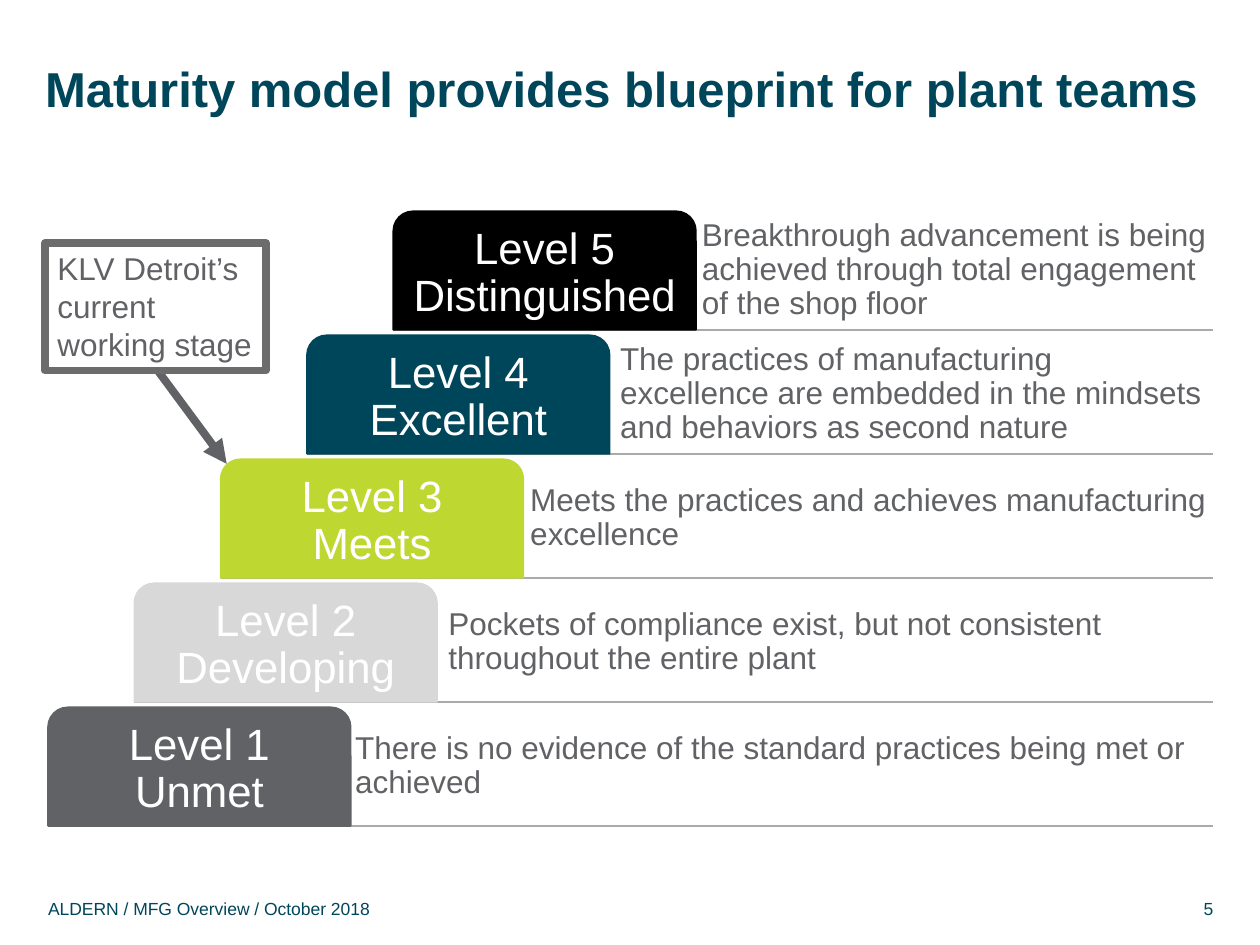
"""Build the maturity model slide: a staircase of five levels."""
from lxml import etree
from pptx import Presentation
from pptx.dml.color import RGBColor
from pptx.enum.shapes import MSO_CONNECTOR, MSO_SHAPE
from pptx.enum.text import MSO_ANCHOR, PP_ALIGN
from pptx.oxml.ns import qn
from pptx.util import Cm, Pt

STRAIGHT = MSO_CONNECTOR.STRAIGHT
TAB = MSO_SHAPE.ROUND_2_SAME_RECTANGLE
RECTANGLE = MSO_SHAPE.RECTANGLE
TOP, MIDDLE, BOTTOM = MSO_ANCHOR.TOP, MSO_ANCHOR.MIDDLE, MSO_ANCHOR.BOTTOM
LEFT, CENTER, RIGHT = PP_ALIGN.LEFT, PP_ALIGN.CENTER, PP_ALIGN.RIGHT

TEAL = RGBColor(0x00, 0x46, 0x5B)
GREY = RGBColor(0x61, 0x62, 0x65)
FRAME_GREY = RGBColor(0x6C, 0x6C, 0x6C)
RULE_GREY = RGBColor(0xAA, 0xAA, 0xAA)
PALE_GREY = RGBColor(0xD8, 0xD8, 0xD8)
LIME = RGBColor(0xBF, 0xD7, 0x31)
BLACK = RGBColor(0x00, 0x00, 0x00)
WHITE = RGBColor(0xFF, 0xFF, 0xFF)

FONT = "Arial"
TAB_WIDTH, TAB_HEIGHT = 6.1, 2.39
FIRST_LEFT, FIRST_TOP = 0.97, 14.26
STEP_RIGHT, STEP_UP = 1.74, 2.5
RIGHT_EDGE = 24.45

LEVELS = [
    ("Unmet", GREY, 7.06,
     "There is no evidence of the standard practices being met or achieved"),
    ("Developing", PALE_GREY, 8.94,
     "Pockets of compliance exist, but not consistent throughout the entire plant"),
    ("Meets", LIME, 10.59,
     "Meets the practices and achieves manufacturing excellence"),
    ("Excellent", TEAL, 12.4,
     "The practices of manufacturing excellence are embedded in the mindsets "
     "and behaviors as second nature"),
    ("Distinguished", BLACK, 14.05,
     "Breakthrough advancement is being achieved through total engagement "
     "of the shop floor"),
]


def write_text(box, text, size=18, color=GREY, bold=False, align=LEFT,
               anchor=MIDDLE, inset=(0, 0), spacing=1.0):
    """Fill a shape or text box with one formatted paragraph."""
    frame = box.text_frame
    frame.word_wrap = True
    frame.vertical_anchor = anchor
    frame.margin_left = frame.margin_right = Cm(inset[0])
    frame.margin_top = frame.margin_bottom = Cm(inset[1])
    para = frame.paragraphs[0]
    para.text = text
    para.alignment = align
    para.line_spacing = spacing
    para.font.name = FONT
    para.font.size = Pt(size)
    para.font.bold = bold
    para.font.color.rgb = color


def add_label(page, left, top, width, height, text, **text_format):
    """Add a text box."""
    box = page.shapes.add_textbox(Cm(left), Cm(top), Cm(width), Cm(height))
    write_text(box, text, **text_format)


def add_line(page, start, end, color, weight, arrow=False):
    """Add a straight line, with an arrowhead at its end if asked."""
    line = page.shapes.add_connector(
        STRAIGHT, Cm(start[0]), Cm(start[1]), Cm(end[0]), Cm(end[1]))
    line.line.color.rgb = color
    line.line.width = Pt(weight)
    if arrow:
        outline = line.line._get_or_add_ln()
        etree.SubElement(outline, qn("a:tailEnd"), type="triangle")
    etree.SubElement(line._element.spPr, qn("a:effectLst"))


def add_level(page, index, name, color, text_left, description):
    """Add one stair: its rule, its tab and its description."""
    left = FIRST_LEFT + index * STEP_RIGHT
    top = FIRST_TOP - index * STEP_UP
    base = top + TAB_HEIGHT
    add_line(page, (left, base), (RIGHT_EDGE, base), RULE_GREY, 1)
    add_label(page, text_left, top, RIGHT_EDGE - text_left, TAB_HEIGHT,
              description, inset=(0.1, 0.1), spacing=0.9)
    tab = page.shapes.add_shape(
        TAB, Cm(left), Cm(top), Cm(TAB_WIDTH), Cm(TAB_HEIGHT))
    tab.shadow.inherit = False
    tab.fill.solid()
    tab.fill.fore_color.rgb = color
    tab.line.color.rgb = color
    tab.line.width = Pt(1)
    write_text(tab, f"Level {index + 1}\v{name}", size=25, color=WHITE,
               align=CENTER, inset=(0.12, 0.12), spacing=0.9)


def add_callout(page, text):
    """Add the framed note and its arrow to the current level."""
    add_line(page, (3.18, 7.47), (4.57, 9.35), GREY, 4.5, arrow=True)
    note = page.shapes.add_shape(
        RECTANGLE, Cm(0.91), Cm(4.9), Cm(4.45), Cm(2.57))
    note.shadow.inherit = False
    note.fill.background()
    note.line.color.rgb = FRAME_GREY
    note.line.width = Pt(4.5)
    write_text(note, text, anchor=TOP, inset=(0.25, 0.13))


def main():
    """Build and save the slide."""
    deck = Presentation()
    deck.slide_width, deck.slide_height = Cm(25.4), Cm(19.05)
    page = deck.slides.add_slide(deck.slide_layouts[6])
    add_label(page, 0.91, 1.17, 23.5, 1.2,
              "Maturity model provides blueprint for plant teams",
              size=28, color=TEAL, bold=True, anchor=TOP)
    for index, level in enumerate(LEVELS):
        add_level(page, index, *level)
    add_callout(page, "KLV Detroit’s current working stage")
    footer = {"size": 10, "color": TEAL, "anchor": BOTTOM}
    add_label(page, 0.97, 17.5, 11.73, 1.02,
              "ALDERN / MFG Overview / October 2018", **footer)
    add_label(page, 23.06, 17.5, 1.4, 1.02, "5", align=RIGHT, **footer)
    deck.save("out.pptx")


if __name__ == "__main__":
    main()
